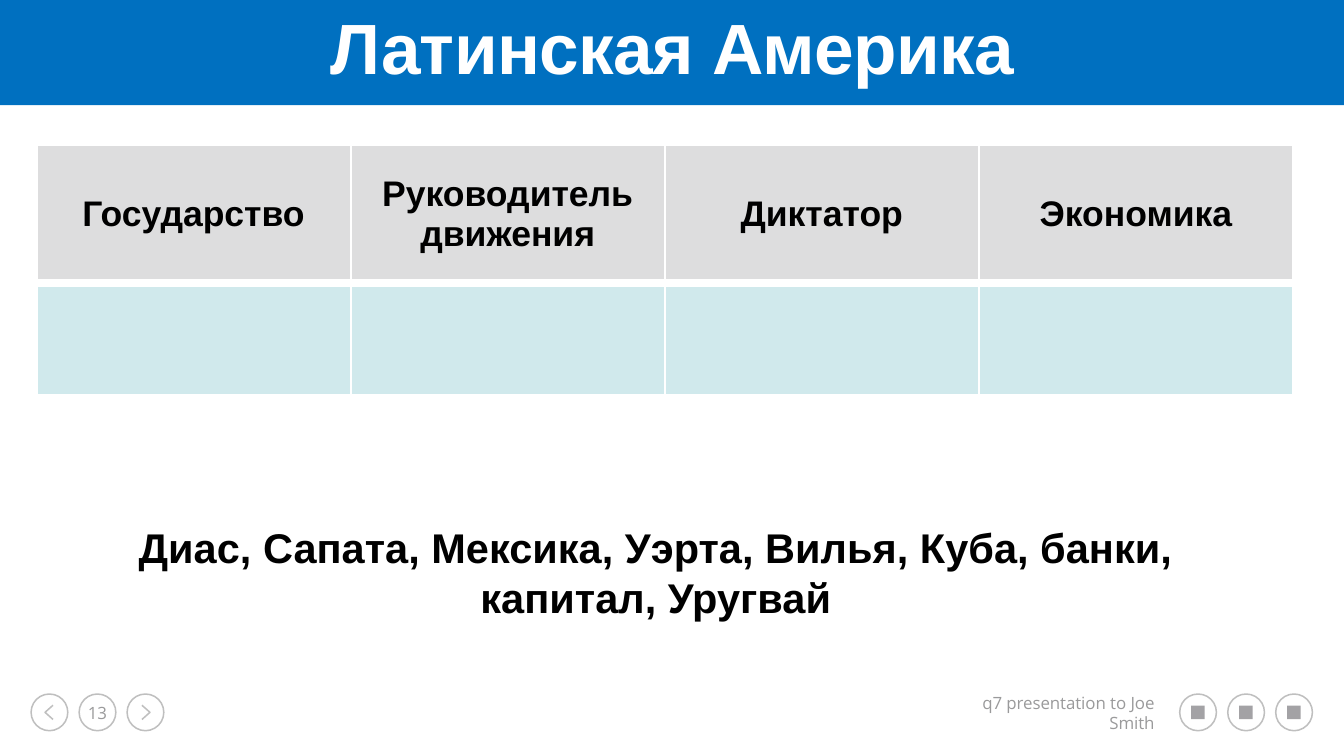
from lxml import etree
from pptx import Presentation
from pptx.dml.color import RGBColor
from pptx.enum.shapes import MSO_SHAPE
from pptx.enum.text import MSO_ANCHOR, MSO_AUTO_SIZE, PP_ALIGN
from pptx.oxml.ns import qn
from pptx.util import Pt

OVAL, RECTANGLE = MSO_SHAPE.OVAL, MSO_SHAPE.RECTANGLE
MIDDLE, TOP = MSO_ANCHOR.MIDDLE, MSO_ANCHOR.TOP
CENTER, RIGHT = PP_ALIGN.CENTER, PP_ALIGN.RIGHT
NO_AUTOFIT = MSO_AUTO_SIZE.NONE

WHITE = RGBColor(0xFF, 0xFF, 0xFF)
BLACK = RGBColor(0x00, 0x00, 0x00)
BLUE = RGBColor(0x00, 0x70, 0xC0)
HEADER_GREY = RGBColor(0xDD, 0xDD, 0xDE)
ANSWER_TEAL = RGBColor(0xD0, 0xE9, 0xEC)
RING_GREY = RGBColor(0xBF, 0xBF, 0xBF)
FOOTER_GREY = RGBColor(0x9A, 0x9A, 0x9B)
ICON_GREY = RGBColor(0xA3, 0xA2, 0xA5)

WIDTH, HEIGHT = 453.54, 255.12
TITLE_FONT = {"name": "Arial", "size": Pt(24), "bold": True}
HEADER_FONT = {"name": "Arial", "size": Pt(12), "bold": True}
WORDS_FONT = {"name": "Arial", "size": Pt(14), "bold": True}
FOOTER_FONT = {"name": "Open Sans", "size": Pt(5.7), "bold": False}

HEADINGS = ["Государство", "Руководитель движения", "Диктатор", "Экономика"]
WORDS = "Диас, Сапата, Мексика, Уэрта, Вилья, Куба, банки, капитал, Уругвай"
RING_SIZE, RING_PITCH = 12.4, 16.2


def set_all(target, values):
    for name, value in values.items():
        setattr(target, name, value)


def write(frame, text, font, color, align=CENTER, spacing=None):
    paragraph = frame.paragraphs[0]
    set_all(paragraph, {"alignment": align, "line_spacing": spacing})
    run = paragraph.add_run()
    run.text = text
    set_all(run.font, font)
    run.font.color.rgb = color
    return run


def place(shape, box):
    set_all(shape, dict(zip(("left", "top", "width", "height"), map(Pt, box))))


def set_frame(frame, anchor, side, edge, wrap=True):
    set_all(frame, {
        "auto_size": NO_AUTOFIT, "word_wrap": wrap, "vertical_anchor": anchor,
        "margin_left": Pt(side), "margin_right": Pt(side),
        "margin_top": Pt(edge), "margin_bottom": Pt(edge),
    })


def add_title(slide, box):
    title = slide.shapes.title
    place(title, box)
    title.fill.solid()
    title.fill.fore_color.rgb = BLUE
    set_frame(title.text_frame, MIDDLE, 0, 0)
    run = write(title.text_frame, "Латинская Америка", TITLE_FONT, WHITE, spacing=0.86)
    run.font._element.set("spc", "-24")


def add_border(cell, side, points):
    line = etree.SubElement(cell._tc.get_or_add_tcPr(), qn(f"a:ln{side}"), w=str(Pt(points)))
    fill = etree.SubElement(line, qn("a:solidFill"))
    etree.SubElement(fill, qn("a:srgbClr"), val=str(WHITE))


def add_answer_table(slide, box, row_heights):
    table = slide.shapes.add_table(2, len(HEADINGS), *map(Pt, box)).table
    table.horz_banding = False
    for row, height in zip(table.rows, row_heights):
        row.height = Pt(height)
    row_styles = [(HEADER_GREY, 1, 3), (ANSWER_TEAL, 3, 1)]
    for row, (color, upper, lower) in zip(table.rows, row_styles):
        for cell in row.cells:
            for side, points in (("L", 1), ("R", 1), ("T", upper), ("B", lower)):
                add_border(cell, side, points)
            cell.fill.solid()
            cell.fill.fore_color.rgb = color
            cell.vertical_anchor = MIDDLE
    for cell, heading in zip(table.rows[0].cells, HEADINGS):
        write(cell.text_frame, heading, HEADER_FONT, BLACK)


def add_text(slide, box, text, font, color, align=CENTER, anchor=MIDDLE,
             side=4.9, edge=2.2, wrap=True):
    frame = slide.shapes.add_textbox(*map(Pt, box)).text_frame
    set_frame(frame, anchor, side, edge, wrap)
    write(frame, text, font, color, align)


def outline(shape):
    shape.shadow.inherit = False
    shape.fill.background()
    shape.line.color.rgb = RING_GREY
    shape.line.width = Pt(0.5)


def add_ring_row(slide, left, top):
    centers = []
    for index in range(3):
        x = left + index * RING_PITCH
        outline(slide.shapes.add_shape(OVAL, Pt(x), Pt(top), Pt(RING_SIZE), Pt(RING_SIZE)))
        centers.append(x + RING_SIZE / 2)
    return centers, top + RING_SIZE / 2


def add_chevron(slide, x, y, direction):
    tip, tail = x + 1.5 * direction, x - 1.2 * direction
    builder = slide.shapes.build_freeform(Pt(tail), Pt(y - 2.4))
    builder.add_line_segments([(Pt(tip), Pt(y)), (Pt(tail), Pt(y + 2.4))], close=False)
    outline(builder.convert_to_shape())


def add_page_navigation(slide, left, top):
    (back, page, forward), middle = add_ring_row(slide, left, top)
    add_chevron(slide, back, middle, -1)
    add_chevron(slide, forward, middle, 1)
    box = (page - RING_SIZE / 2, top, RING_SIZE, RING_SIZE)
    add_text(slide, box, "13", FOOTER_FONT, FOOTER_GREY, side=0, edge=0, wrap=False)


def add_social_links(slide, left, top):
    centers, middle = add_ring_row(slide, left, top)
    size = 4.6
    for center in centers:
        icon = slide.shapes.add_shape(
            RECTANGLE, Pt(center - size / 2), Pt(middle - size / 2), Pt(size), Pt(size))
        icon.shadow.inherit = False
        icon.fill.solid()
        icon.fill.fore_color.rgb = ICON_GREY
        icon.line.fill.background()


def main():
    deck = Presentation()
    set_all(deck, {"slide_width": Pt(WIDTH), "slide_height": Pt(HEIGHT)})
    slide = deck.slides.add_slide(deck.slide_layouts[5])
    add_title(slide, (0, 0, WIDTH, 35.5))
    add_answer_table(slide, (12.4, 48.9, 424, 84.5), (46.7, 37.8))
    add_text(slide, (24.5, 172.8, 393.8, 41), WORDS, WORDS_FONT, BLACK,
             anchor=TOP, side=7.2, edge=3.6)
    add_page_navigation(slide, 10.5, 234.2)
    add_text(slide, (313.9, 234.7, 80.6, 11.5), "q7 presentation to Joe Smith",
             FOOTER_FONT, FOOTER_GREY, align=RIGHT)
    add_social_links(slide, 398.1, 234.2)
    deck.save("out.pptx")


if __name__ == "__main__":
    main()
